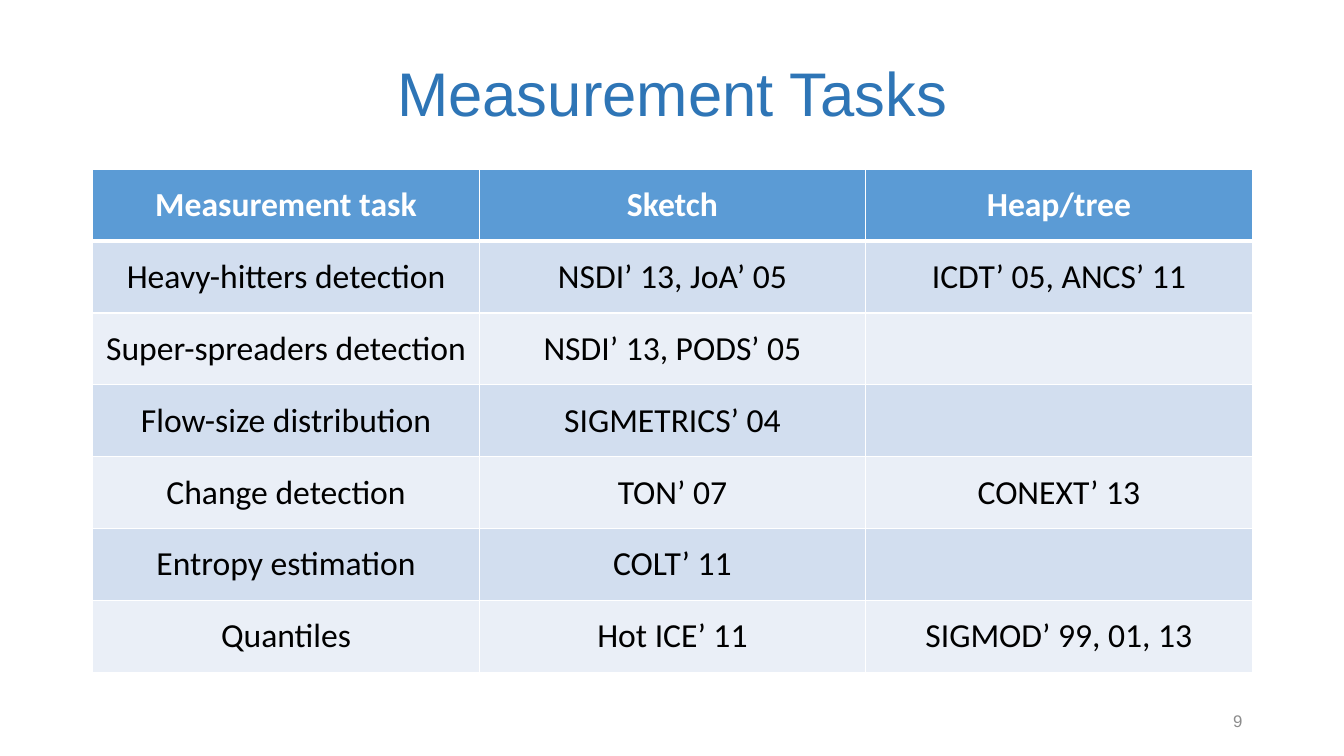
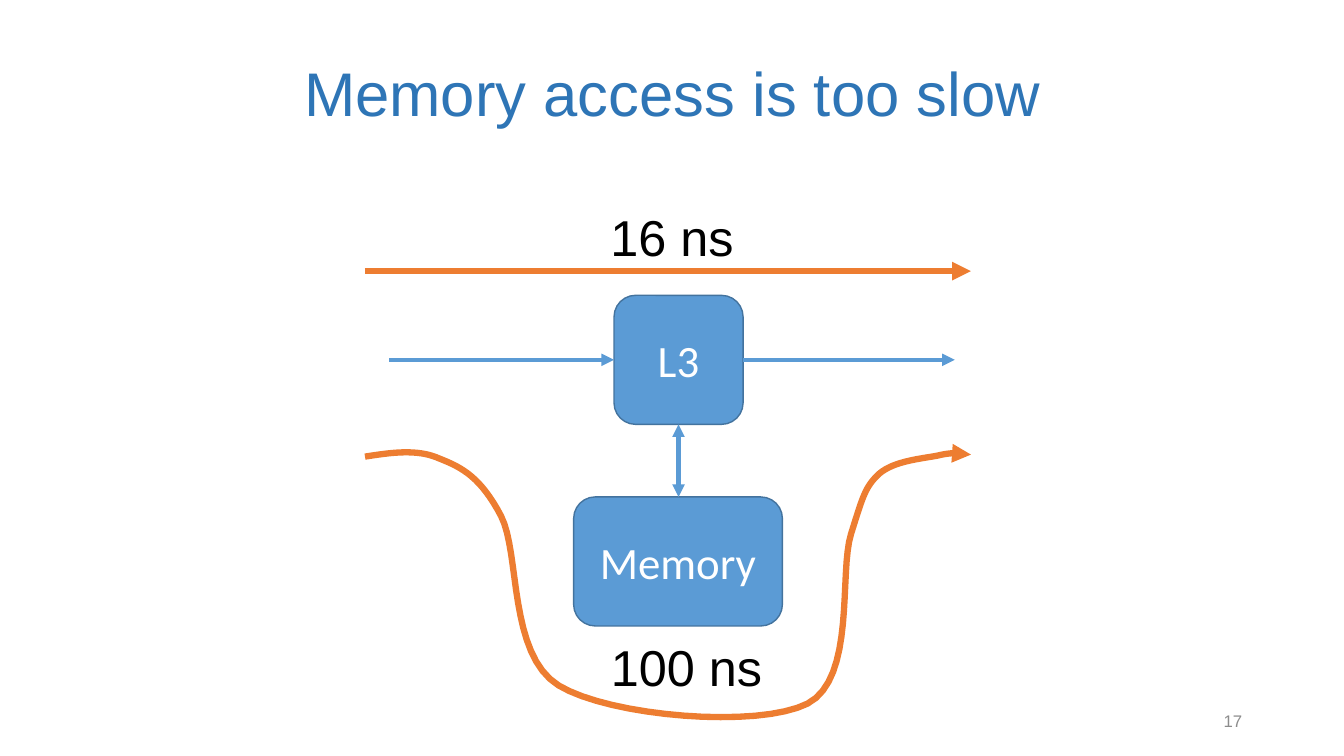
from lxml import etree
from pptx import Presentation
from pptx.dml.color import RGBColor
from pptx.enum.shapes import MSO_CONNECTOR, MSO_SHAPE
from pptx.enum.text import MSO_ANCHOR, PP_ALIGN
from pptx.oxml.ns import qn
from pptx.util import Inches, Pt

LEFT, CENTER, RIGHT = PP_ALIGN.LEFT, PP_ALIGN.CENTER, PP_ALIGN.RIGHT
TOP, MIDDLE = MSO_ANCHOR.TOP, MSO_ANCHOR.MIDDLE
STRAIGHT = MSO_CONNECTOR.STRAIGHT
ROUNDED = MSO_SHAPE.ROUNDED_RECTANGLE
color = RGBColor.from_string

HEADING, BLUE, DARK_BLUE, ORANGE = "2E75B6", "5B9BD5", "43739E", "ED7D31"
BANDS = ["EAEFF7", "D2DEEF"]
WHITE, BLACK, GRAY = "FFFFFF", "000000", "8C8C8C"
MARGIN, CONTENT_WIDTH = 0.92, 11.5


def write_text(frame, text, size, font, text_color, alignment=CENTER, bold=False):
    frame.text = text
    paragraph = frame.paragraphs[0]
    paragraph.alignment = alignment
    for run in paragraph.runs:
        run.font.size = Pt(size)
        run.font.name = font
        run.font.bold = bold
        run.font.color.rgb = color(text_color)


def style_arrow(shape, line_color, width, ends=("tailEnd",)):
    shape.line.color.rgb = color(line_color)
    shape.line.width = Pt(width)
    properties = shape.element.spPr
    for end in ends:
        etree.SubElement(properties.find(qn("a:ln")), qn("a:" + end), type="triangle")
    etree.SubElement(properties, qn("a:effectLst"))


presentation = Presentation()
presentation.slide_width = Inches(13.33)
presentation.slide_height = Inches(7.5)

# Titles and slide numbers
slides = []
for title_text, number in [("Measurement Tasks", "9"), ("Memory access is too slow", "17")]:
    slide = presentation.slides.add_slide(presentation.slide_layouts[5])
    title = slide.shapes.title
    title.left, title.top = Inches(MARGIN), Inches(0.23)
    title.width, title.height = Inches(CONTENT_WIDTH), Inches(1.45)
    title.text_frame.vertical_anchor = MIDDLE
    write_text(title.text_frame, title_text, 44, "Arial", HEADING)
    title.text_frame.paragraphs[0].line_spacing = 0.9

    number_box = slide.shapes.add_textbox(Inches(9.42), Inches(6.95), Inches(3), Inches(0.4))
    number_box.text_frame.word_wrap = True
    number_box.text_frame.vertical_anchor = MIDDLE
    write_text(number_box.text_frame, number, 12, "Arial", GRAY, RIGHT)
    slides.append(slide)
tasks_slide, memory_slide = slides

# Table of measurement tasks
rows = [
    ("Measurement task", "Sketch", "Heap/tree"),
    ("Heavy-hitters detection", "NSDI’ 13, JoA’ 05", "ICDT’ 05, ANCS’ 11"),
    ("Super-spreaders detection", "NSDI’ 13, PODS’ 05", ""),
    ("Flow-size distribution", "SIGMETRICS’ 04", ""),
    ("Change detection", "TON’ 07", "CONEXT’ 13"),
    ("Entropy estimation", "COLT’ 11", ""),
    ("Quantiles", "Hot ICE’ 11", "SIGMOD’ 99, 01, 13"),
]
column_count = len(rows[0])
table_shape = tasks_slide.shapes.add_table(
    len(rows), column_count, Inches(MARGIN), Inches(1.68), Inches(CONTENT_WIDTH), Inches(4.99))
table = table_shape.table
for row_index, row in enumerate(rows):
    is_header = row_index == 0
    for column_index, text in enumerate(row):
        cell = table.cell(row_index, column_index)
        cell.vertical_anchor = MIDDLE
        cell.fill.solid()
        cell.fill.fore_color.rgb = color(BLUE if is_header else BANDS[row_index % 2])
        write_text(cell.text_frame, text, 24, "Calibri",
                   WHITE if is_header else BLACK, bold=is_header)

# White cell borders, thicker below the header
for cell_index, properties in enumerate(table_shape.element.iter(qn("a:tcPr"))):
    row_index = cell_index // column_count
    for position, side in enumerate(["lnL", "lnR", "lnT", "lnB"]):
        thick = (row_index, side) in [(0, "lnB"), (1, "lnT")]
        border = etree.Element(qn("a:" + side), w=str(Pt(3 if thick else 1)))
        fill = etree.SubElement(border, qn("a:solidFill"))
        etree.SubElement(fill, qn("a:srgbClr"), val=WHITE)
        properties.insert(position, border)

# Cache and memory boxes
for text, left, top, width in [("L3", 6.09, 2.93, 1.28), ("Memory", 5.69, 4.93, 2.07)]:
    box = memory_slide.shapes.add_shape(
        ROUNDED, Inches(left), Inches(top), Inches(width), Inches(1.28))
    box.shadow.inherit = False
    box.fill.solid()
    box.fill.fore_color.rgb = color(BLUE)
    box.line.color.rgb = color(DARK_BLUE)
    box.line.width = Pt(1)
    box.text_frame.vertical_anchor = MIDDLE
    write_text(box.text_frame, text, 32, "Calibri", WHITE)

# Straight arrows
for start_x, start_y, end_x, end_y, line_color, width, ends in [
    (3.86, 3.57, 6.09, 3.57, BLUE, 3, ["tailEnd"]),
    (6.73, 4.21, 6.73, 4.93, BLUE, 3, ["headEnd", "tailEnd"]),
    (7.37, 3.57, 9.47, 3.57, BLUE, 3, ["tailEnd"]),
    (3.62, 2.69, 9.63, 2.69, ORANGE, 4.5, ["tailEnd"]),
]:
    arrow = memory_slide.shapes.add_connector(
        STRAIGHT, Inches(start_x), Inches(start_y), Inches(end_x), Inches(end_y))
    style_arrow(arrow, line_color, width, ends)

# Curved path through memory, sampled from cubic Bézier segments
start = (3.62, 4.53)
segments = [
    [(3.88, 4.49), (4.14, 4.45), (4.36, 4.55)],
    [(4.59, 4.64), (4.77, 4.74), (4.97, 5.12)],
    [(5.16, 5.49), (5.04, 6.49), (5.54, 6.8)],
    [(6.05, 7.11), (7.52, 7.23), (8.01, 6.98)],
    [(8.49, 6.73), (8.32, 5.68), (8.44, 5.3)],
    [(8.56, 4.92), (8.58, 4.83), (8.72, 4.7)],
    [(8.87, 4.57), (9.15, 4.55), (9.3, 4.52)],
    [(9.46, 4.48), (9.54, 4.5), (9.63, 4.51)],
]
STEPS = 16
curve_points = []
segment_start = start
for segment in segments:
    for step in range(1, STEPS + 1):
        t = step / STEPS
        weights = [(1 - t) ** 3, 3 * t * (1 - t) ** 2, 3 * t ** 2 * (1 - t), t ** 3]
        controls = [segment_start, *segment]
        curve_points.append(tuple(
            Inches(sum(weight * point[axis] for weight, point in zip(weights, controls)))
            for axis in (0, 1)))
    segment_start = segment[-1]
builder = memory_slide.shapes.build_freeform(Inches(start[0]), Inches(start[1]))
builder.add_line_segments(curve_points, close=False)
memory_path = builder.convert_to_shape()
memory_path.fill.background()
style_arrow(memory_path, ORANGE, 4.5)

# Latency labels
for text, left, top, width, alignment in [
    ("16 ns", 5.82, 2, 1.69, CENTER),
    ("100 ns", 5.96, 6.26, 2.43, LEFT),
]:
    label = memory_slide.shapes.add_textbox(
        Inches(left), Inches(top), Inches(width), Inches(0.71))
    label.text_frame.word_wrap = True
    label.text_frame.vertical_anchor = TOP
    write_text(label.text_frame, text, 36, "Arial", BLACK, alignment)

presentation.save("out.pptx")
